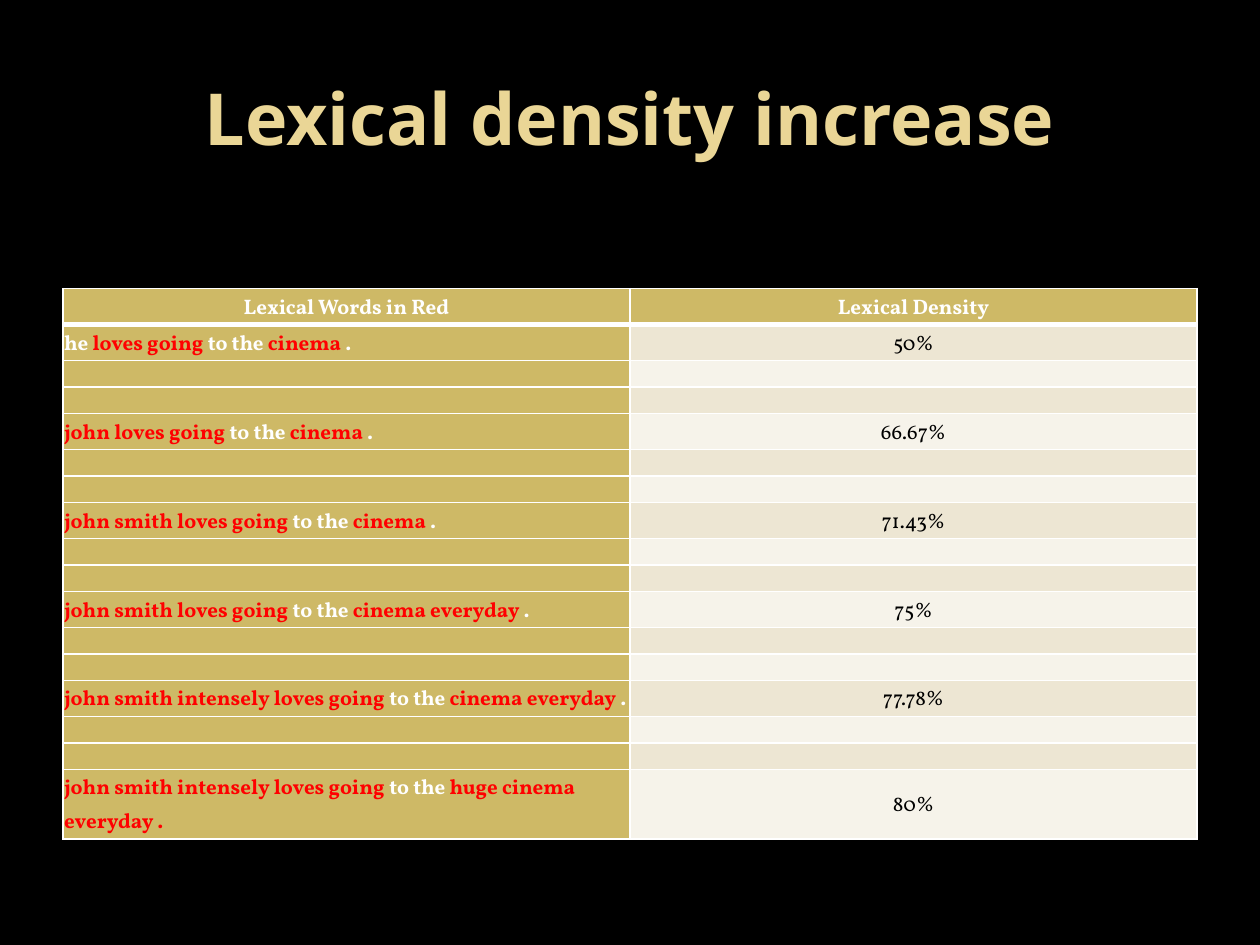
from dataclasses import dataclass

import pptx
import pptx.dml.color
import pptx.enum.text
import pptx.oxml
import pptx.oxml.ns
import pptx.table
import pptx.text.text
import pptx.util

Inches = pptx.util.Inches
RGBColor = pptx.dml.color.RGBColor
Align = pptx.enum.text.PP_ALIGN
Anchor = pptx.enum.text.MSO_ANCHOR

BLACK = RGBColor(0x00, 0x00, 0x00)
WHITE = RGBColor(0xFF, 0xFF, 0xFF)
RED = RGBColor(0xFF, 0x00, 0x00)
PALE_GOLD = RGBColor(0xEA, 0xD6, 0x96)
GOLD = RGBColor(0xCE, 0xB9, 0x66)
BANDS = (RGBColor(0xED, 0xE6, 0xD3), RGBColor(0xF6, 0xF3, 0xEA))

HEADINGS = ("Lexical Words in Red", "Lexical Density")
ROWS_PER_EXAMPLE = 3  # the sentence and two empty rows
TEXT_ROW, EMPTY_ROW, WRAPPED_ROW = Inches(0.28), Inches(0.21), Inches(0.55)


@dataclass(frozen=True)
class Example:
    """A sentence in pieces, lexical (red) and grammatical (white)."""
    pieces: tuple[tuple[str, RGBColor], ...]
    density: str


EXAMPLES = (
    Example((("he ", WHITE), ("loves going ", RED), ("to the ", WHITE),
             ("cinema", RED), (" .", WHITE)), "50%"),
    Example((("john loves going ", RED), ("to the ", WHITE),
             ("cinema", RED), (" .", WHITE)), "66.67%"),
    Example((("john smith loves going ", RED), ("to the ", WHITE),
             ("cinema", RED), (" .", WHITE)), "71.43%"),
    Example((("john smith loves going ", RED), ("to the ", WHITE),
             ("cinema everyday ", RED), (".", WHITE)), "75%"),
    Example((("john smith intensely loves going ", RED), ("to the ", WHITE),
             ("cinema everyday ", RED), (".", WHITE)), "77.78%"),
    Example((("john smith intensely loves going ", RED), ("to the ", WHITE),
             ("huge cinema everyday .", RED)), "80%"),
)


def add_text(paragraph: pptx.text.text._Paragraph, text: str, *,
             color: RGBColor, font: str = "Vollkorn", size: float = 12,
             bold: bool = True, align: Align = Align.CENTER,
             line_spacing: float = 1.15) -> None:
    paragraph.alignment = align
    paragraph.line_spacing = line_spacing
    run = paragraph.add_run()
    run.text = text
    run.font.name = font
    run.font.size = pptx.util.Pt(size)
    run.font.bold = bold
    run.font.color.rgb = color


def add_borders(cell: pptx.table._Cell, top: float = 1, bottom: float = 1) -> None:
    """Put white lines, with widths in points, ahead of the cell's fill."""
    properties = cell._tc.get_or_add_tcPr()
    widths = {"lnL": 1, "lnR": 1, "lnT": top, "lnB": bottom}
    for position, (side, width) in enumerate(widths.items()):
        properties.insert(position, pptx.oxml.parse_xml(
            f'<a:{side} {pptx.oxml.ns.nsdecls("a")} w="{pptx.util.Pt(width)}">'
            f'<a:solidFill><a:srgbClr val="{WHITE}"/></a:solidFill></a:{side}>'))


def format_cell(cell: pptx.table._Cell, row: int, column: int) -> None:
    cell.margin_left = cell.margin_right = Inches(0.01)
    cell.margin_top = cell.margin_bottom = Inches(0.01)
    cell.vertical_anchor = Anchor.MIDDLE
    cell.fill.solid()
    is_gold = row == 0 or column == 0
    cell.fill.fore_color.rgb = GOLD if is_gold else BANDS[(row - 1) % 2]
    add_borders(cell, top=3 if row == 1 else 1, bottom=3 if row == 0 else 1)


def keep_row_low(cell: pptx.table._Cell) -> None:
    """Give an empty cell a small text size so that its row does not grow."""
    cell.text_frame.paragraphs[0]._p.append(pptx.oxml.parse_xml(
        f'<a:endParaRPr {pptx.oxml.ns.nsdecls("a")} sz="800"/>'))


def fill_table(table: pptx.table.Table) -> None:
    for column, heading in enumerate(HEADINGS):
        add_text(table.cell(0, column).text_frame.paragraphs[0], heading, color=WHITE)
    for index, example in enumerate(EXAMPLES):
        sentence, density = table.rows[1 + index * ROWS_PER_EXAMPLE].cells
        for text, color in example.pieces:
            add_text(sentence.text_frame.paragraphs[0], text, color=color,
                     align=Align.LEFT)
        add_text(density.text_frame.paragraphs[0], example.density,
                 color=BLACK, bold=False)

    for row_index, row in enumerate(table.rows):
        has_text = row_index == 0 or row_index % ROWS_PER_EXAMPLE == 1
        row.height = TEXT_ROW if has_text else EMPTY_ROW
        for column, cell in enumerate(row.cells):
            format_cell(cell, row_index, column)
            if not has_text:
                keep_row_low(cell)
    table.rows[len(table.rows) - 1].height = WRAPPED_ROW


def main() -> None:
    presentation = pptx.Presentation()
    presentation.slide_width, presentation.slide_height = Inches(10), Inches(7.5)
    slide = presentation.slides.add_slide(presentation.slide_layouts[5])
    slide.background.fill.solid()
    slide.background.fill.fore_color.rgb = BLACK

    title = slide.shapes.title
    title.left, title.top = Inches(0.5), Inches(0.3)
    title.width, title.height = Inches(9), Inches(1.25)
    title.text_frame.vertical_anchor = Anchor.MIDDLE
    add_text(title.text_frame.paragraphs[0], "Lexical density increase",
             color=PALE_GOLD, font="Noto Sans", size=41, line_spacing=1.0)

    row_count = 2 + (len(EXAMPLES) - 1) * ROWS_PER_EXAMPLE
    densities = slide.shapes.add_table(row_count, len(HEADINGS), Inches(0.5),
                                       Inches(2.29), Inches(9), Inches(4.21))
    densities.table.first_col = True
    fill_table(densities.table)
    presentation.save("out.pptx")


if __name__ == "__main__":
    main()
